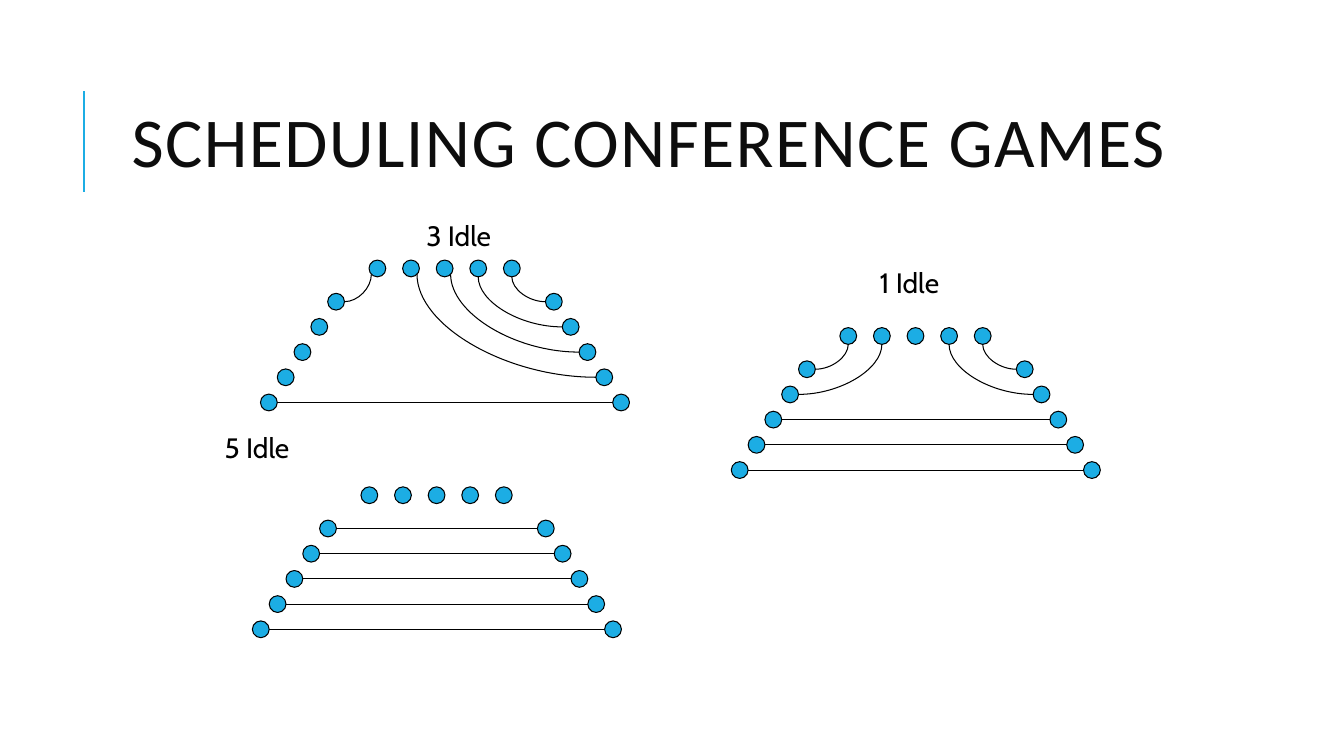
from lxml import etree
from pptx import Presentation
from pptx.dml.color import RGBColor
from pptx.enum.shapes import MSO_CONNECTOR, MSO_SHAPE
from pptx.enum.text import MSO_ANCHOR, PP_ALIGN
from pptx.oxml.ns import qn
from pptx.util import Inches, Pt

STRAIGHT, CURVE = MSO_CONNECTOR.STRAIGHT, MSO_CONNECTOR.CURVE
OVAL = MSO_SHAPE.OVAL
MIDDLE = MSO_ANCHOR.MIDDLE
CENTER = PP_ALIGN.CENTER

THEME = {
    "accent": RGBColor(0x1C, 0xAD, 0xE4),
    "title": RGBColor(0x0D, 0x0D, 0x0D),
    "ink": RGBColor(0, 0, 0),
    "title_font": "Calibri",
    "label_font": "Cabin",
    "title_size": Pt(50),
    "label_size": Pt(20),
    "bar_width": Pt(1.5),
    "line_width": Pt(0.75),
}

DOT = 1 / 6
RADIUS = DOT / 2
TOP_COUNT, SIDE_COUNT = 5, 5
TOP_GAP, ROW_GAP, SLANT = 1 / 3, 0.25, 1 / 6

presentation = Presentation()
presentation.slide_width = Inches(13.33)
presentation.slide_height = Inches(7.5)
slide = presentation.slides.add_slide(presentation.slide_layouts[6])


def add_line(kind, start, end, color, width):
    connector = slide.shapes.add_connector(
        kind, *[Inches(value) for value in (*start, *end)])
    connector.line.color.rgb = color
    connector.line.width = width
    properties = connector._element.spPr
    etree.SubElement(properties, qn("a:effectLst"))
    if kind == CURVE:
        properties.find(qn("a:prstGeom")).set("prst", "curvedConnector2")


def add_text(text, left, top, width, height, font, size, color):
    box = slide.shapes.add_textbox(
        Inches(left), Inches(top), Inches(width), Inches(height))
    frame = box.text_frame
    frame.word_wrap = True
    frame.vertical_anchor = MIDDLE
    paragraph = frame.paragraphs[0]
    paragraph.text = text
    paragraph.alignment = CENTER
    paragraph.font.name = font
    paragraph.font.size = size
    paragraph.font.color.rgb = color
    return paragraph


add_line(STRAIGHT, (0.83, 1.9), (0.83, 0.9), THEME["accent"], THEME["bar_width"])
title = add_text("SCHEDULING CONFERENCE GAMES", 1.12, 0.64, 10.63, 1.64,
                 THEME["title_font"], THEME["title_size"], THEME["title"])
title.line_spacing = 0.8
title.runs[0].font._element.set("spc", "100")

# Each curve: side, row on that side, index in the top row, shift from the dot's bottom
diagrams = [
    {"label": "1 Idle", "label_center": (9.02, 2.8), "origin": (7.25, 3.25),
     "straight_rows": [2, 3, 4],
     "curves": [("left", 0, 0, 0), ("left", 1, 1, 0),
                ("right", 0, 4, 0), ("right", 1, 3, 0)]},
    {"label": "3 Idle", "label_center": (4.55, 2.33), "origin": (2.58, 2.58),
     "straight_rows": [4],
     "curves": [("left", 0, 0, -0.06), ("right", 0, 4, 0), ("right", 1, 3, 0),
                ("right", 2, 2, 0.06), ("right", 3, 1, 0.06)]},
    {"label": "5 Idle", "label_center": (2.55, 4.44), "origin": (2.5, 4.83),
     "straight_rows": [0, 1, 2, 3, 4],
     "curves": []},
]

for diagram in diagrams:
    left, top = diagram["origin"]
    top_row = [(left + 1.08 + index * TOP_GAP, top) for index in range(TOP_COUNT)]
    rows = [top + 0.33 + row * ROW_GAP for row in range(SIDE_COUNT)]
    sides = {
        "left": [(left + 0.67 - row * SLANT, y) for row, y in enumerate(rows)],
        "right": [(left + 2.83 + row * SLANT, y) for row, y in enumerate(rows)],
    }

    for x, y in top_row + sides["left"] + sides["right"]:
        dot = slide.shapes.add_shape(
            OVAL, Inches(x), Inches(y), Inches(DOT), Inches(DOT))
        dot.shadow.inherit = False
        dot.fill.solid()
        dot.fill.fore_color.rgb = THEME["accent"]
        dot.line.color.rgb = THEME["ink"]
        dot.line.width = THEME["line_width"]

    for row in diagram["straight_rows"]:
        y = rows[row] + RADIUS
        add_line(STRAIGHT, (sides["left"][row][0] + DOT, y),
                 (sides["right"][row][0], y), THEME["ink"], THEME["line_width"])

    for side, row, index, shift in diagram["curves"]:
        x, y = sides[side][row]
        start = (x + DOT if side == "left" else x, y + RADIUS)
        drop = RADIUS + (RADIUS ** 2 - shift ** 2) ** 0.5
        end = (top_row[index][0] + RADIUS + shift, top + drop)
        add_line(CURVE, start, end, THEME["ink"], THEME["line_width"])

    center_x, center_y = diagram["label_center"]
    add_text(diagram["label"], center_x - 0.6, center_y - 0.2, 1.2, 0.4,
             THEME["label_font"], THEME["label_size"], THEME["ink"])

presentation.save("out.pptx")
